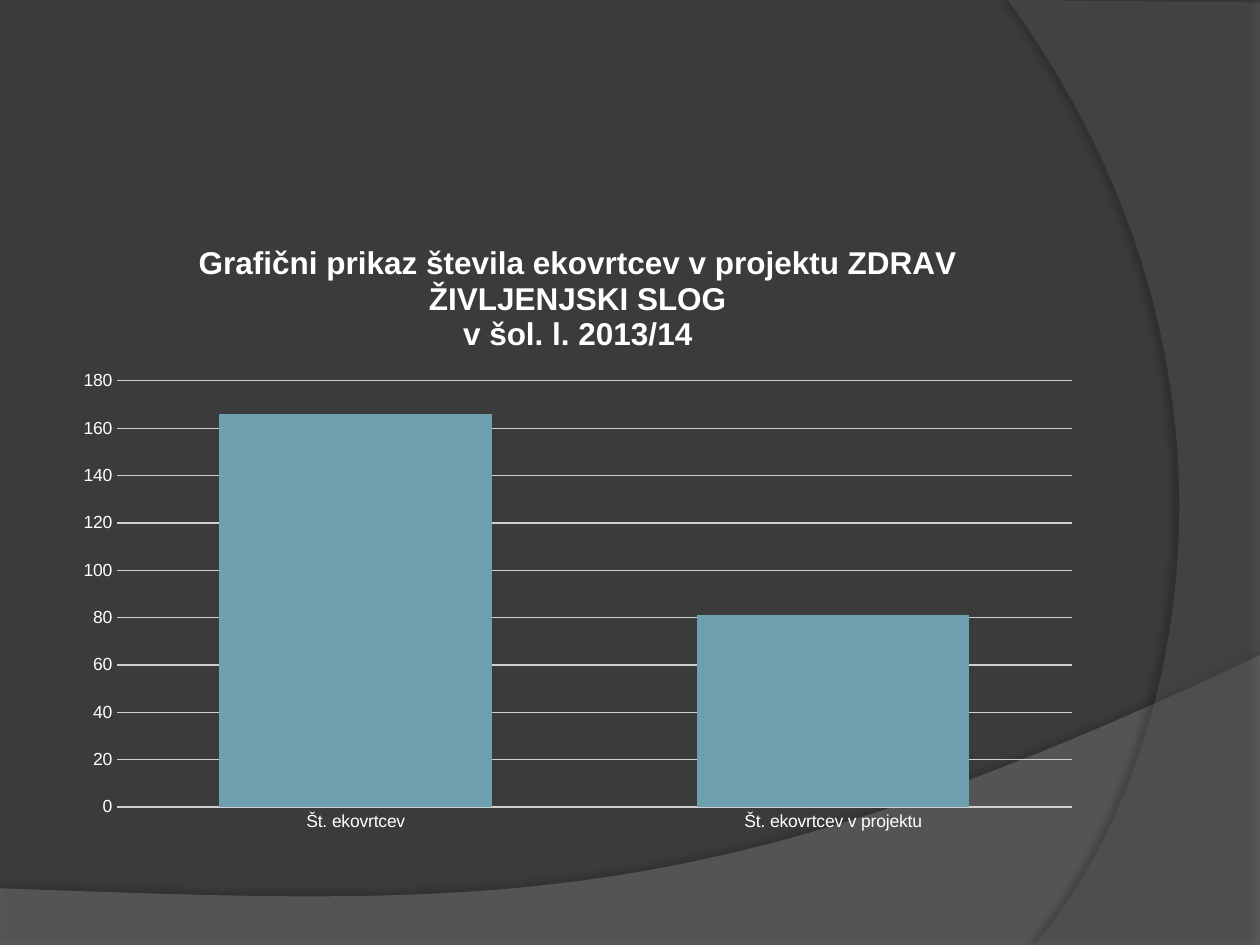
from lxml import etree
from pptx import Presentation, util as u
from pptx.chart.data import CategoryChartData
from pptx.dml.color import RGBColor
from pptx.enum import chart as ch
from pptx.oxml.ns import qn

# Content
TITLE = ["Grafični prikaz števila ekovrtcev v projektu ZDRAV ŽIVLJENJSKI SLOG",
         "v šol. l. 2013/14"]
KINDERGARTENS = {"Št. ekovrtcev": 166, "Št. ekovrtcev v projektu": 81}
CHART_BOX = (0.5, 1.75, 8.17, 4.95)

THEME = {
    "background": "3B3B3B", "text": "FFFFFF", "bar": "6EA0B0", "grid": "D0D0D0",
    "font": "Arial", "label_size": 10, "title_size": 18, "line": 0.75,
}

# Background waves: corner points, with a six-number entry for a Bezier curve
WAVES = [
    {"outline": [(0, 7.05), (0, 7.51), (10, 7.51), (10, 5.2),
                 (5.59, 7.29, 3.91, 7.19, 0, 7.05)],
     "fill": "7F7F7F", "opacity": 45,
     "shadow": {"opacity": 35, "blur": 4, "dist": 3.5, "angle": 270}},
    {"outline": [(10, 0.02), (10, 7.5), (8.21, 7.5),
                 (9.35, 6.19, 10.18, 3, 8, 0)],
     "fill": "5E5E5E", "opacity": 40,
     "shadow": {"opacity": 45, "blur": 4, "dist": 4, "angle": 180}},
]
CURVE_STEPS = 48


def color(name):
    return RGBColor.from_string(THEME[name])


def set_format(target, values):
    for key, value in values.items():
        setattr(target, key, value)


def set_font(font, size, bold):
    set_format(font, {"name": THEME["font"], "size": u.Pt(THEME[size]), "bold": bold})
    font.color.rgb = color("text")


def flatten(outline):
    """Turn corners and Bezier curves into a list of points."""
    points = []
    for entry in outline:
        if len(entry) == 2:
            points.append(entry)
            continue
        controls = [points[-1], entry[:2], entry[2:4], entry[4:]]
        for step in range(1, CURVE_STEPS + 1):
            t = step / CURVE_STEPS
            weights = ((1 - t) ** 3, 3 * t * (1 - t) ** 2, 3 * t * t * (1 - t), t ** 3)
            points.append(tuple(sum(w * c[axis] for w, c in zip(weights, controls))
                                for axis in (0, 1)))
    return [(u.Inches(x), u.Inches(y)) for x, y in points]


def add_opacity(color_element, percent):
    etree.SubElement(color_element, qn("a:alpha"), val=str(percent * 1000))


def add_wave(slide, wave):
    start, *rest = flatten(wave["outline"])
    builder = slide.shapes.build_freeform(*start)
    builder.add_line_segments(rest, close=True)
    shape = builder.convert_to_shape()
    shape.line.fill.background()
    shape.fill.solid()
    shape.fill.fore_color.rgb = RGBColor.from_string(wave["fill"])
    properties = shape.element.spPr
    add_opacity(properties.find(qn("a:solidFill"))[0], wave["opacity"])

    # Soft outer shadow
    shape.shadow.inherit = False
    shadow = wave["shadow"]
    outer = etree.SubElement(
        properties.find(qn("a:effectLst")), qn("a:outerShdw"),
        blurRad=str(u.Pt(shadow["blur"])), dist=str(u.Pt(shadow["dist"])),
        dir=str(shadow["angle"] * 60000), algn="ctr", rotWithShape="0")
    add_opacity(etree.SubElement(outer, qn("a:srgbClr"), val="000000"), shadow["opacity"])


def add_kindergarten_chart(slide):
    data = CategoryChartData()
    data.categories = list(KINDERGARTENS)
    data.add_series("Series 1", list(KINDERGARTENS.values()))
    chart = slide.shapes.add_chart(
        ch.XL_CHART_TYPE.COLUMN_CLUSTERED, *map(u.Inches, CHART_BOX), data).chart
    chart.has_legend = False
    set_font(chart.font, "label_size", False)

    # Title
    heading = chart.chart_title.text_frame
    heading.text = "\n".join(TITLE)
    for paragraph in heading.paragraphs:
        for run in paragraph.runs:
            set_font(run.font, "title_size", True)

    # Columns
    columns = chart.plots[0]
    set_format(columns, {"gap_width": 75, "overlap": -25, "vary_by_categories": False})
    bar_fill = columns.series[0].format.fill
    bar_fill.solid()
    bar_fill.fore_color.rgb = color("bar")

    # Axes and gridlines
    counts, groups = chart.value_axis, chart.category_axis
    for axis in (counts, groups):
        set_format(axis, {"major_tick_mark": ch.XL_TICK_MARK.NONE,
                          "minor_tick_mark": ch.XL_TICK_MARK.NONE})
    set_format(counts, {"minimum_scale": 0, "maximum_scale": 180, "major_unit": 20,
                        "has_major_gridlines": True})
    counts.format.line.fill.background()
    for line in (counts.major_gridlines.format.line, groups.format.line):
        line.width = u.Pt(THEME["line"])
        line.color.rgb = color("grid")


def main():
    deck = Presentation()
    set_format(deck, {"slide_width": u.Inches(10), "slide_height": u.Inches(7.5)})
    slide = deck.slides.add_slide(deck.slide_layouts[6])
    slide.background.fill.solid()
    slide.background.fill.fore_color.rgb = color("background")
    for wave in WAVES:
        add_wave(slide, wave)
    add_kindergarten_chart(slide)
    deck.save("out.pptx")


if __name__ == "__main__":
    main()
